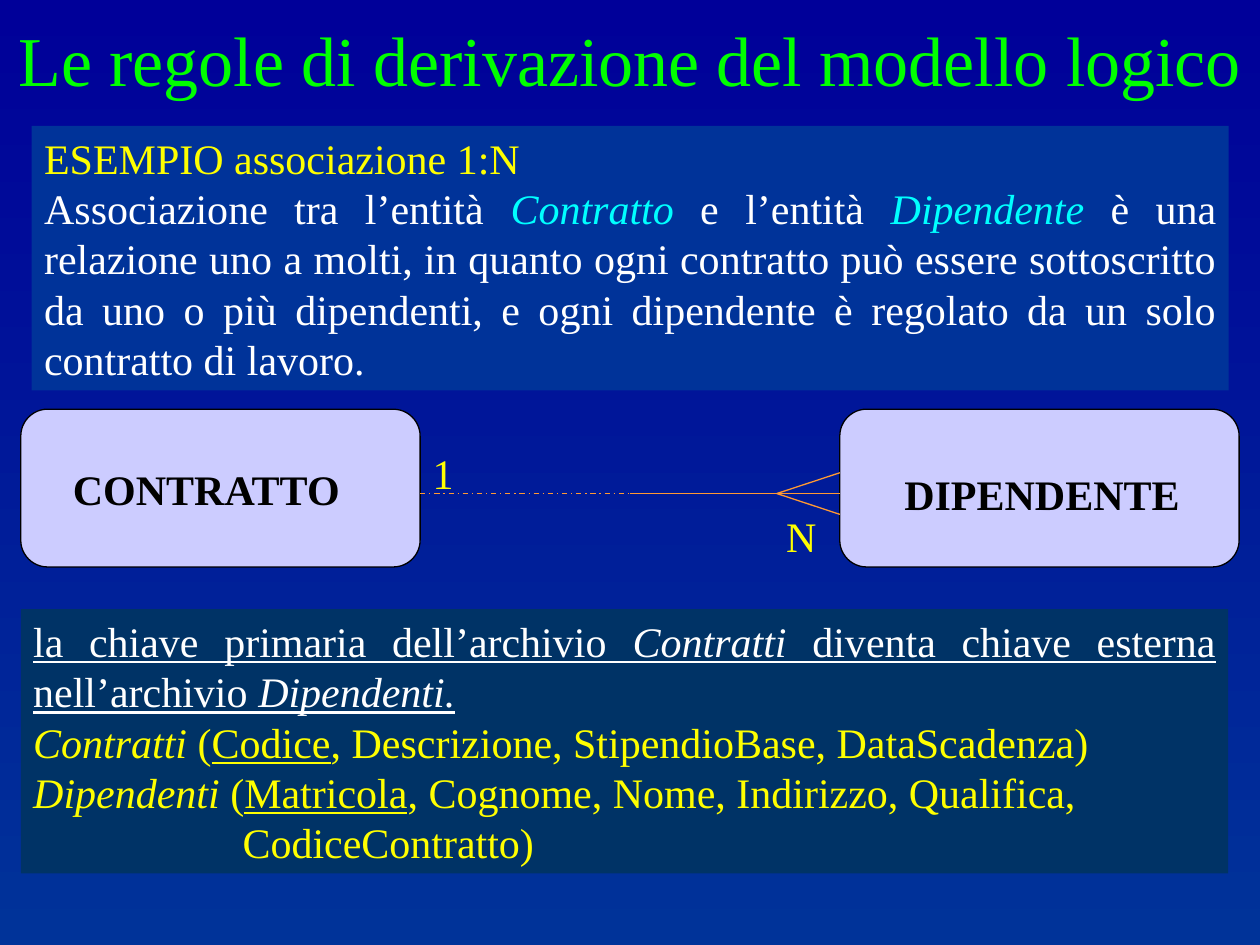
from pptx import Presentation
from pptx.dml.color import RGBColor
from pptx.enum.dml import MSO_LINE
from pptx.enum.shapes import MSO_CONNECTOR, MSO_SHAPE
from pptx.enum.text import MSO_ANCHOR, MSO_AUTO_SIZE, PP_ALIGN
from pptx.oxml.ns import qn
from pptx.util import Cm, Pt

RECT, ROUND = MSO_SHAPE.RECTANGLE, MSO_SHAPE.ROUNDED_RECTANGLE
LINE, DASH = MSO_CONNECTOR.STRAIGHT, MSO_LINE.DASH_DOT
TOP, MIDDLE = MSO_ANCHOR.TOP, MSO_ANCHOR.MIDDLE
FIXED = MSO_AUTO_SIZE.NONE
LEFT, CENTER, JUSTIFY = PP_ALIGN.LEFT, PP_ALIGN.CENTER, PP_ALIGN.JUSTIFY
FACE = "Times New Roman"
WHITE, YELLOW, CYAN, BLACK = "FFFFFF", "FFFF00", "00FFFF", "000000"
GREEN, ORANGE, LILAC = "00FF00", "FF9933", "CCCCFF"


def rgb(code):
    return RGBColor.from_string(code)


def style(par, color, align=LEFT, size=24, bold=False):
    par.alignment = align
    par.font.name, par.font.size = FACE, Pt(size)
    par.font.bold = bold
    par.font.color.rgb = rgb(color)


deck = Presentation()
deck.slide_width, deck.slide_height = Cm(25.4), Cm(19.05)
slide = deck.slides.add_slide(deck.slide_layouts[5])
shapes = slide.shapes

back = slide.background.fill
back.gradient()
back.gradient_angle = 270
for stop, code in zip(back.gradient_stops, ("000099", "003399")):
    stop.color.rgb = rgb(code)

title = shapes.title
title.left, title.top = Cm(0), Cm(0.2)
title.width, title.height = Cm(25.4), Cm(1.96)
frame = title.text_frame
frame.text = "Le regole di derivazione del modello logico"
frame.auto_size, frame.vertical_anchor = FIXED, MIDDLE
style(frame.paragraphs[0], GREEN, CENTER, 40)

# Each panel: left, top, width, fill, paragraphs.
# Each paragraph: colour, runs of (text, i = italic / u = underline, colour if other).
panels = [
    (0.64, 2.54, 24.13, "003399", [
        (YELLOW, [("ESEMPIO associazione 1:N", "")]),
        (WHITE, [
            ("Associazione tra l’entità ", ""), ("Contratto", "i", CYAN),
            (" e l’entità ", ""), ("Dipendente", "i", CYAN),
            (" è una relazione uno a molti, in quanto ogni contratto può "
             "essere sottoscritto da uno o più dipendenti, e ogni dipendente "
             "è regolato da un solo contratto di lavoro.", "")]),
    ]),
    (0.42, 12.28, 24.34, "003366", [
        (WHITE, [
            ("la chiave primaria dell’archivio ", "u"), ("Contratti ", "iu"),
            ("diventa chiave esterna nell’archivio ", "u"),
            ("Dipendenti.", "iu")]),
        (YELLOW, [
            ("Contratti", "i"), (" (", ""), ("Codice", "u"),
            (", Descrizione, StipendioBase, DataScadenza)", "")]),
        (YELLOW, [
            ("Dipendenti", "i"), (" (", ""), ("Matricola", "u"),
            (", Cognome, Nome, Indirizzo, Qualifica,", "")]),
        (YELLOW, [("CodiceContratto)", "")]),
    ]),
]
for x, y, wide, fill, pars in panels:
    panel = shapes.add_shape(RECT, Cm(x), Cm(y), Cm(wide), Cm(5.33))
    panel.shadow.inherit = False
    panel.fill.solid()
    panel.fill.fore_color.rgb = rgb(fill)
    panel.line.fill.background()
    frame = panel.text_frame
    frame.word_wrap, frame.vertical_anchor = True, TOP
    for n, (color, runs) in enumerate(pars):
        par = frame.add_paragraph() if n else frame.paragraphs[0]
        style(par, color, JUSTIFY)
        for text, marks, *other in runs:
            run = par.add_run()
            run.text = text
            if "i" in marks:
                run.font.italic = True
            if "u" in marks:
                run.font.underline = True
            # Run colour is set directly so the shape's own text style cannot win.
            run.font.color.rgb = rgb(other[0] if other else color)

# Indent the continued attribute list of the last panel
par._p.get_or_add_pPr().set("marL", str(Cm(4.22)))

for x in (0.42, 16.93):
    box = shapes.add_shape(ROUND, Cm(x), Cm(8.25), Cm(8.05), Cm(3.18))
    box.shadow.inherit = False
    box.adjustments[0] = 0.17
    box.fill.solid()
    box.fill.fore_color.rgb = rgb(LILAC)
    box.line.color.rgb = rgb(BLACK)
    box.line.width = Pt(0.75)

# Link between the entities, ending in a crow's foot
mid = 9.95
for x1, x2, y2, dash in [
    (8.47, 12.7, mid, DASH), (12.7, 16.93, mid, None),
    (15.66, 16.93, mid + 0.42, None), (15.66, 16.93, mid - 0.42, None),
]:
    link = shapes.add_connector(LINE, Cm(x1), Cm(mid), Cm(x2), Cm(y2))
    link.line.color.rgb = rgb(ORANGE)
    link.line.width = Pt(0.75)
    if dash:
        link.line.dash_style = dash
    prop = link._element.spPr
    prop.append(prop.makeelement(qn("a:effectLst"), {}))

for text, x, y, wide, color, bold in [
    ("CONTRATTO", 1.22, 9.22, 5.97, BLACK, True),
    ("DIPENDENTE", 17.98, 9.32, 6.07, BLACK, True),
    ("1", 8.47, 8.89, 0.94, YELLOW, False),
    ("N", 15.6, 10.16, 1.12, YELLOW, False),
]:
    label = shapes.add_textbox(Cm(x), Cm(y), Cm(wide), Cm(1.27))
    frame = label.text_frame
    frame.text, frame.word_wrap = text, False
    style(frame.paragraphs[0], color, bold=bold)

deck.save("out.pptx")
